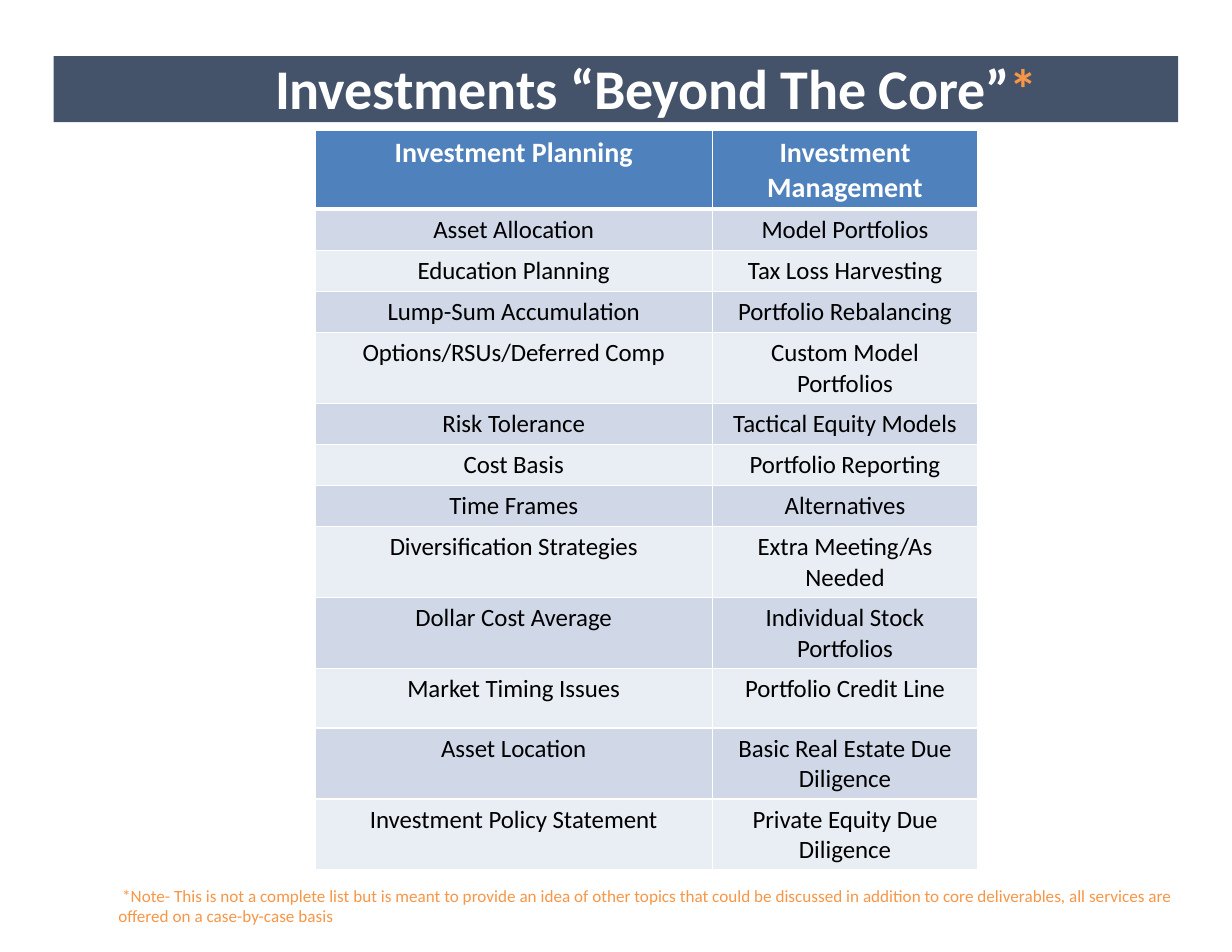
from dataclasses import dataclass

from lxml import etree
from pptx import Presentation
from pptx.dml.color import RGBColor
from pptx.enum import shapes, text
from pptx.oxml import ns
from pptx.util import Pt


@dataclass(frozen=True)
class Theme:
    font: str = "Calibri"
    navy: str = "44536A"
    blue: str = "4F81BD"
    bands: tuple = ("D0D8E8", "E9EDF4")
    white: str = "FFFFFF"
    black: str = "000000"
    orange: str = "F79646"
    title: int = 36
    head: int = 18
    body: int = 16
    note: int = 11


THEME = Theme()

ROWS = [
    ("Investment Planning", "Investment Management"),
    ("Asset Allocation", "Model Portfolios"),
    ("Education Planning", "Tax Loss Harvesting"),
    ("Lump-Sum Accumulation", "Portfolio Rebalancing"),
    ("Options/RSUs/Deferred Comp", "Custom Model Portfolios"),
    ("Risk Tolerance", "Tactical Equity Models"),
    ("Cost Basis", "Portfolio Reporting"),
    ("Time Frames", "Alternatives"),
    ("Diversification Strategies", "Extra Meeting/As Needed"),
    ("Dollar Cost Average", "Individual Stock Portfolios"),
    ("Market Timing Issues", "Portfolio Credit Line"),
    ("Asset Location", "Basic Real Estate Due Diligence"),
    ("Investment Policy Statement", "Private Equity Due Diligence"),
]
WIDTHS = (255.5, 170.5)
# Row heights: one line by default, taller where listed
LINE, TALL = 24.5, 41.8
HEIGHTS = {0: 46, 4: TALL, 8: TALL, 9: TALL, 10: 38.2, 11: TALL, 12: TALL}

NOTE = (" *Note- This is not a complete list but is meant to provide an idea "
        "of other topics that could be discussed in addition to core "
        "deliverables, all services are offered on a case-by-case basis")


def style(run, size, color, bold=False):
    font = run.font
    font.name, font.size, font.bold = THEME.font, Pt(size), bold
    font.color.rgb = RGBColor.from_string(color)


def paint(fill, color):
    fill.solid()
    fill.fore_color.rgb = RGBColor.from_string(color)


def add_title(slide):
    bar = slide.shapes.add_shape(shapes.MSO_SHAPE.RECTANGLE,
                                 Pt(34.5), Pt(36), Pt(723), Pt(42.5))
    bar.shadow.inherit = False
    paint(bar.fill, THEME.navy)
    bar.line.fill.background()
    frame = bar.text_frame
    frame.margin_left = frame.margin_right = 0
    frame.margin_top = frame.margin_bottom = 0
    frame.vertical_anchor = text.MSO_ANCHOR.TOP
    para = frame.paragraphs[0]
    para.alignment = text.PP_ALIGN.CENTER
    para.line_spacing = Pt(41.5)
    # Shift the centred title to the right
    para._p.get_or_add_pPr().set("marL", str(Pt(52)))
    for part, color in (("Investments “Beyond The Core”", THEME.white),
                        ("*", THEME.orange)):
        run = para.add_run()
        run.text = part
        style(run, THEME.title, color, True)
        run.font._element.set("spc", "-10")


def edge(cell, side, width):
    props = cell._tc.get_or_add_tcPr()
    line = etree.SubElement(props, ns.qn("a:" + side), w=str(Pt(width)))
    fill = etree.SubElement(line, ns.qn("a:solidFill"))
    etree.SubElement(fill, ns.qn("a:srgbClr"), val=THEME.white)


def fill_cell(cell, words, row):
    head = row == 0
    cell.text_frame.text = words
    para = cell.text_frame.paragraphs[0]
    para.alignment = text.PP_ALIGN.CENTER
    style(para.runs[0], THEME.head if head else THEME.body,
          THEME.white if head else THEME.black, head)
    # Borders come before the fill in the cell properties
    for side in ("lnL", "lnR", "lnT", "lnB"):
        thick = (head and side == "lnB") or (row == 1 and side == "lnT")
        edge(cell, side, 3 if thick else 1)
    paint(cell.fill, THEME.blue if head else THEME.bands[(row - 1) % 2])


def add_grid(slide):
    tall = [HEIGHTS.get(row, LINE) for row in range(len(ROWS))]
    grid = slide.shapes.add_table(len(ROWS), len(WIDTHS), Pt(202.5), Pt(84),
                                  Pt(sum(WIDTHS)), Pt(sum(tall))).table
    for col, width in zip(grid.columns, WIDTHS):
        col.width = Pt(width)
    for row, words in enumerate(ROWS):
        grid.rows[row].height = Pt(tall[row])
        for col, word in enumerate(words):
            fill_cell(grid.cell(row, col), word, row)


def add_note(slide):
    box = slide.shapes.add_textbox(Pt(69), Pt(552), Pt(723), Pt(47.5))
    frame = box.text_frame
    frame.word_wrap = True
    frame.margin_top = Pt(17)
    frame.text = NOTE
    style(frame.paragraphs[0].runs[0], THEME.note, THEME.orange)


def main():
    deck = Presentation()
    deck.slide_width, deck.slide_height = Pt(792), Pt(612)
    slide = deck.slides.add_slide(deck.slide_layouts[6])
    add_title(slide)
    add_note(slide)
    add_grid(slide)
    deck.save("out.pptx")


if __name__ == "__main__":
    main()
